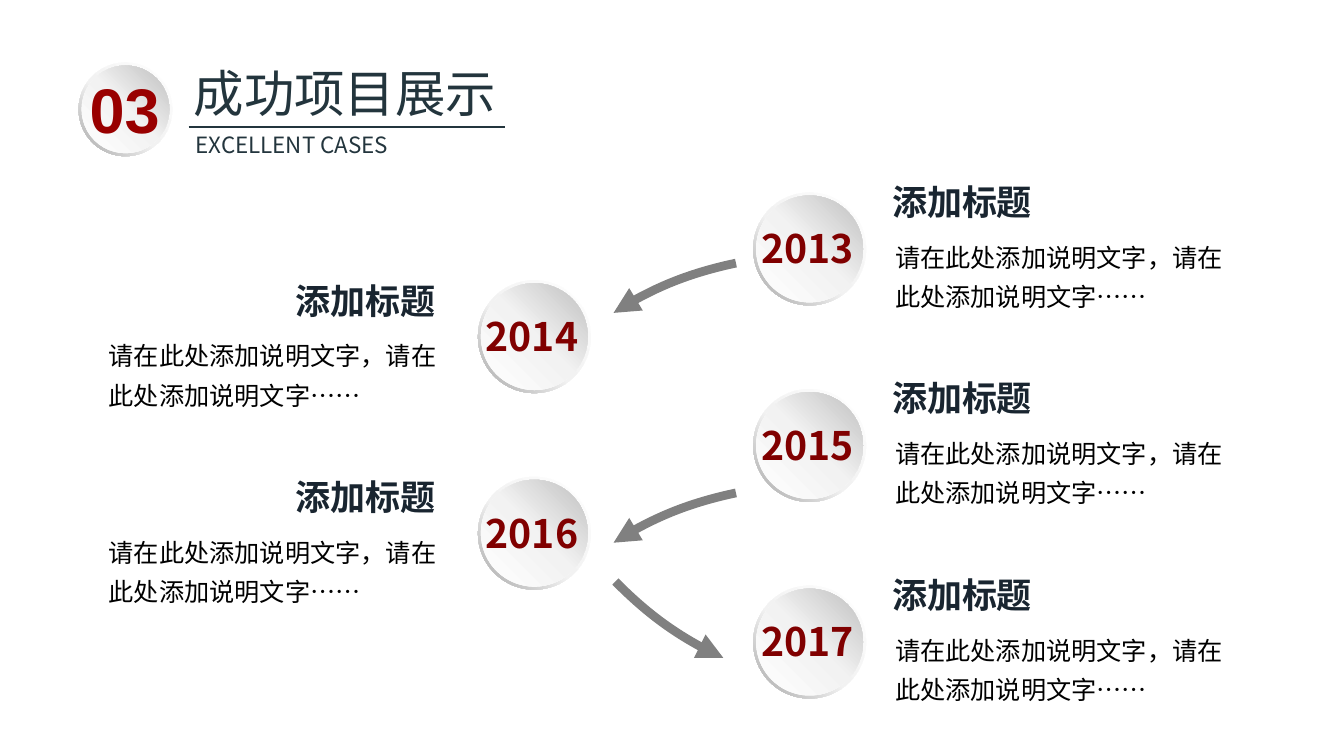
from copy import deepcopy

from pptx import Presentation
from pptx.dml.color import RGBColor
from pptx.enum import shapes, text
from pptx.oxml import ns
from pptx.oxml import xmlchemy
from pptx.util import Inches, Pt

FONT = "Noto Sans CJK SC"
SLATE = "23353D"
ROW_GAP = 1.95
DISC_SIZE = 1.12
DESCRIPTION = "请在此处添加说明文字，请在此处添加说明文字……"
RIGHT_OFFSETS = {"heading": (1.28, -0.17), "description": (1.31, 0.35)}
LEFT_OFFSETS = {"heading": (-1.91, -0.06), "description": (-3.76, 0.46)}
MILESTONES = [
    ("2013", 7.47, 1.91, RIGHT_OFFSETS),
    ("2014", 4.74, 2.78, LEFT_OFFSETS),
    ("2015", 7.47, 1.91 + ROW_GAP, RIGHT_OFFSETS),
    ("2016", 4.74, 2.78 + ROW_GAP, LEFT_OFFSETS),
    ("2017", 7.47, 1.91 + 2 * ROW_GAP, RIGHT_OFFSETS),
]
ARROWS = [(6.27, 1.65, 257.1, False), (5.79, 2.77, 314.5, True), (6.27, 3.93, 257.1, False)]


def color(value):
    """Turn a hex string into a colour."""
    return RGBColor.from_string(value)


def box(left, top, width, height):
    """Give the four lengths of a box in inches."""
    return [Inches(length) for length in (left, top, width, height)]


def write(shape, words, size, ink, bold=False, font=FONT, wrap=False, inset=(0.1, 0.05)):
    """Fill a text shape with one formatted paragraph and return the paragraph."""
    frame = shape.text_frame
    frame.text = words
    frame.word_wrap = wrap
    frame.auto_size = text.MSO_AUTO_SIZE.SHAPE_TO_FIT_TEXT
    frame.vertical_anchor = text.MSO_ANCHOR.TOP
    frame.margin_left = frame.margin_right = Inches(inset[0])
    frame.margin_top = frame.margin_bottom = Inches(inset[1])
    paragraph = frame.paragraphs[0]
    paragraph.alignment = text.PP_ALIGN.LEFT
    run = paragraph.runs[0]
    run.font.size = Pt(size)
    run.font.bold = bold
    run.font.color.rgb = color(ink)
    run.font.name = font
    east_asian = xmlchemy.OxmlElement("a:ea")
    east_asian.set("typeface", font)
    run.font._element.append(east_asian)
    return paragraph


def fill_gradient(shape, stops, angle):
    """Give a shape a three-stop linear gradient and no outline."""
    shape.shadow.inherit = False
    shape.line.fill.background()
    shape.fill.gradient()
    shape.fill.gradient_angle = angle
    stop_list = next(shape._element.iter(ns.qn("a:gsLst")))
    stop_list.append(deepcopy(stop_list[0]))
    for stop, (position, shade) in zip(shape.fill.gradient_stops, stops):
        stop.position = position
        stop.color.rgb = color(shade)


def add_disc(group, left, top, size):
    """Draw a raised disc: a shaded rim around a shaded face."""
    rim = group.shapes.add_shape(shapes.MSO_SHAPE.DONUT, *box(left, top, size, size))
    rim.adjustments[0] = 0.06
    fill_gradient(rim, [(0, "FFFFFF"), (0.55, "F2F2F2"), (1, "A6A6A6")], 225)
    face_size = size - 0.06
    face = group.shapes.add_shape(
        shapes.MSO_SHAPE.OVAL, *box(left + 0.03, top + 0.03, face_size, face_size))
    fill_gradient(face, [(0, "FFFFFF"), (0.51, "F2F2F2"), (1, "BFBFBF")], 45)


def add_milestone(slide, year, left, top, offsets):
    """Draw one year disc with its heading and description."""
    group = slide.shapes.add_group_shape()
    add_disc(group, left, top, DISC_SIZE)
    year_box = group.shapes.add_textbox(*box(left - 0.02, top + 0.27, 1.17, 0.57))
    write(year_box, year, 28, "800000", bold=True)
    across, down = offsets["description"]
    description = group.shapes.add_textbox(*box(left + across, top + down, 3.46, 0.89))
    write(description, DESCRIPTION, 18, "000000", wrap=True).line_spacing = 1.3
    across, down = offsets["heading"]
    heading = group.shapes.add_textbox(*box(left + across, top + down, 1.6, 0.52))
    write(heading, "添加标题", 25, "192530", bold=True)


def add_curved_arrow(slide, left, top, rotation, flipped):
    """Draw a thick grey arc with an arrowhead at its start."""
    arc = slide.shapes.add_shape(shapes.MSO_SHAPE.ARC, *box(left, top, 2.46, 4.35))
    arc.adjustments[0] = 185.96
    arc.adjustments[1] = 2.11
    arc.rotation = rotation
    arc.shadow.inherit = False
    arc.fill.background()
    arc.line.color.rgb = color("808080")
    arc.line.width = Pt(6.25)
    head = xmlchemy.OxmlElement("a:headEnd")
    head.set("type", "triangle")
    arc.line._get_or_add_ln().append(head)
    if flipped:
        transform = arc._element.spPr.find(ns.qn("a:xfrm"))
        transform.set("flipH", "1")
        transform.set("flipV", "1")


def add_header(slide):
    """Place the title, its subtitle and the rule between them."""
    title = slide.shapes.title
    title.left, title.top, title.width, title.height = box(1.85, 0.58, 3.18, 0.68)
    write(title, "成功项目展示", 36, SLATE, inset=(0.07, 0.04))
    subtitle = slide.shapes.add_textbox(*box(1.87, 1.26, 3.14, 0.34))
    paragraph = write(subtitle, "EXCELLENT CASES", 16, SLATE, wrap=True, inset=(0.07, 0.04))
    paragraph.alignment = text.PP_ALIGN.JUSTIFY
    rule = slide.shapes.add_connector(
        shapes.MSO_CONNECTOR.STRAIGHT, Inches(1.87), Inches(1.26), Inches(5.01), Inches(1.26))
    rule.line.color.rgb = color(SLATE)
    rule.line.width = Pt(1.75)
    rule._element.spPr.append(xmlchemy.OxmlElement("a:effectLst"))


def add_section_badge(slide):
    """Draw the section number on its disc."""
    group = slide.shapes.add_group_shape()
    add_disc(group, 0.78, 0.62, 0.93)
    number = group.shapes.add_textbox(*box(0.79, 0.65, 0.9, 0.86))
    write(number, "03", 45, "990000", bold=True, font="Arial")


def main():
    """Build the slide and save it."""
    presentation = Presentation()
    presentation.slide_width = Inches(13.33)
    presentation.slide_height = Inches(7.5)
    slide = presentation.slides.add_slide(presentation.slide_layouts.get_by_name("Title Only"))
    add_header(slide)
    for arrow in ARROWS:
        add_curved_arrow(slide, *arrow)
    for milestone in MILESTONES:
        add_milestone(slide, *milestone)
    add_section_badge(slide)
    presentation.save("out.pptx")


if __name__ == "__main__":
    main()
